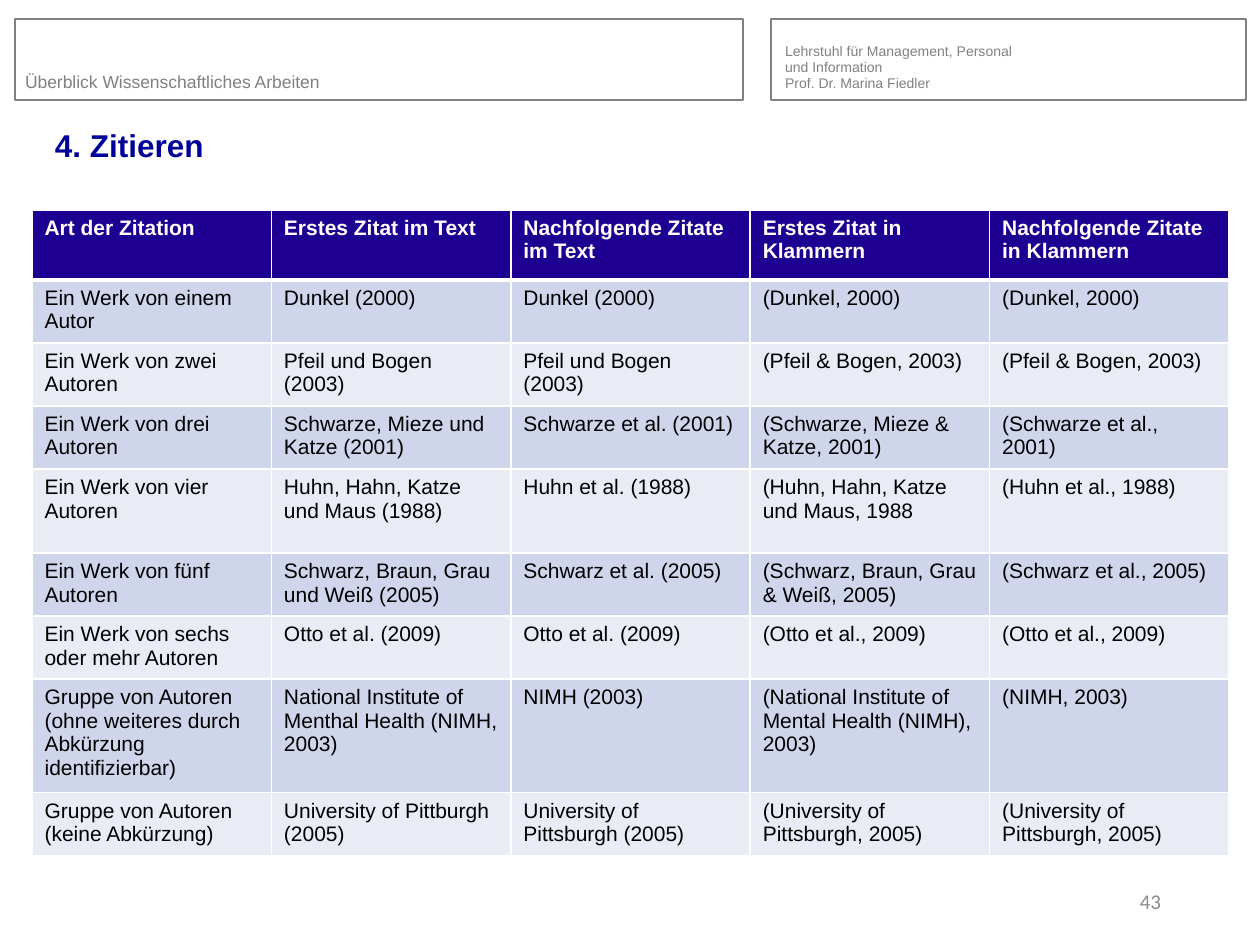
import copy

import lxml.etree
import pptx
import pptx.dml.color
import pptx.enum.shapes
import pptx.enum.text
import pptx.oxml.ns
import pptx.util

SCALE = 914400 / 126
THEME = {
    "font": "Arial", "number_font": "Calibri",
    "gray": "808080", "number_gray": "8C8C8C", "blue": "000099",
    "header": "1D0092", "bands": ("CFD5EA", "E9EBF5"),
    "white": "FFFFFF", "black": "000000",
    "title_size": 18, "table_size": 12, "course_size": 10, "chair_size": 8,
}
ANCHOR = pptx.enum.text.MSO_ANCHOR
ALIGN = pptx.enum.text.PP_ALIGN
qn = pptx.oxml.ns.qn


def px(length):
    return pptx.util.Emu(round(length * SCALE))


def write(frame, text, size, color, bold=False, font=THEME["font"], paragraph_format=None):
    frame.text = text
    for paragraph in frame.paragraphs:
        for name, value in (paragraph_format or {}).items():
            setattr(paragraph, name, value)
        for run in paragraph.runs:
            for name, value in {"size": pptx.util.Pt(size), "bold": bold, "name": font}.items():
                setattr(run.font, name, value)
            run.font.color.rgb = pptx.dml.color.RGBColor.from_string(color)
        for line_break in paragraph._p.findall(qn("a:br")):
            line_break.insert(0, copy.deepcopy(paragraph.runs[0].font._element))


deck = pptx.Presentation()
deck.slide_width, deck.slide_height = px(1260), px(945)
slide = deck.slides.add_slide(deck.slide_layouts[6])

for left, width in ((15, 728), (771, 475)):
    header_frame = slide.shapes.add_shape(
        pptx.enum.shapes.MSO_SHAPE.RECTANGLE, px(left), px(19), px(width), px(81))
    header_frame.shadow.inherit = False
    header_frame.fill.background()
    header_frame.line.color.rgb = pptx.dml.color.RGBColor.from_string(THEME["gray"])
    header_frame.line.width = pptx.util.Pt(0.75)

captions = [
    ("Überblick Wissenschaftliches Arbeiten", (25, 38, 421, 54), (0, 0), ANCHOR.BOTTOM,
     {"size": THEME["course_size"], "color": THEME["gray"]}),
    ("Lehrstuhl für Management, Personal \vund Information\nProf. Dr. Marina Fiedler",
     (785, 30, 369, 62), (0, 0), ANCHOR.BOTTOM,
     {"size": THEME["chair_size"], "color": THEME["gray"],
      "paragraph_format": {"line_spacing": 0.95}}),
    ("43", (890, 876, 284, 50), (13, 6), ANCHOR.MIDDLE,
     {"size": THEME["table_size"], "color": THEME["number_gray"],
      "font": THEME["number_font"], "paragraph_format": {"alignment": ALIGN.RIGHT}}),
    ("4. Zitieren", (42, 116, 1187, 63), (13, 6), ANCHOR.MIDDLE,
     {"size": THEME["title_size"], "color": THEME["blue"], "bold": True,
      "paragraph_format": {"line_spacing": 0.9}}),
]
for text, box, (side, edge), anchor, style in captions:
    caption = slide.shapes.add_textbox(*map(px, box)).text_frame
    layout = {"word_wrap": True, "vertical_anchor": anchor,
              "margin_left": px(side), "margin_right": px(side),
              "margin_top": px(edge), "margin_bottom": px(edge)}
    for name, value in layout.items():
        setattr(caption, name, value)
    write(caption, text, **style)

citations = [
    ("Art der Zitation", "Erstes Zitat im Text", "Nachfolgende Zitate im Text",
     "Erstes Zitat in Klammern", "Nachfolgende Zitate in Klammern"),
    ("Ein Werk von einem Autor", "Dunkel (2000)", "Dunkel (2000)",
     "(Dunkel, 2000)", "(Dunkel, 2000)"),
    ("Ein Werk von zwei Autoren", "Pfeil und Bogen (2003)", "Pfeil und Bogen (2003)",
     "(Pfeil & Bogen, 2003)", "(Pfeil & Bogen, 2003)"),
    ("Ein Werk von drei Autoren", "Schwarze, Mieze und Katze (2001)", "Schwarze et al. (2001)",
     "(Schwarze, Mieze & Katze, 2001)", "(Schwarze et al., 2001)"),
    ("Ein Werk von vier Autoren", "Huhn, Hahn, Katze und Maus (1988)", "Huhn et al. (1988)",
     "(Huhn, Hahn, Katze und Maus, 1988", "(Huhn et al., 1988)"),
    ("Ein Werk von fünf Autoren", "Schwarz, Braun, Grau und Weiß (2005)",
     "Schwarz et al. (2005)", "(Schwarz, Braun, Grau & Weiß, 2005)", "(Schwarz et al., 2005)"),
    ("Ein Werk von sechs oder mehr Autoren", "Otto et al. (2009)", "Otto et al. (2009)",
     "(Otto et al., 2009)", "(Otto et al., 2009)"),
    ("Gruppe von Autoren (ohne weiteres durch Abkürzung identifizierbar)",
     "National Institute of Menthal Health (NIMH, 2003)", "NIMH (2003)",
     "(National Institute of Mental Health (NIMH), 2003)", "(NIMH, 2003)"),
    ("Gruppe von Autoren (keine Abkürzung)", "University of Pittburgh (2005)",
     "University of Pittsburgh (2005)", "(University of Pittsburgh, 2005)",
     "(University of Pittsburgh, 2005)"),
]
row_heights = [70, 59, 59, 59, 84, 59, 59, 107, 59]
table_width = px(1197)
citation_table = slide.shapes.add_table(
    len(citations), len(citations[0]), px(32), px(210), table_width, px(sum(row_heights))).table
for column in citation_table.columns:
    column.width = pptx.util.Emu(table_width // len(citations[0]))

for row, (entries, height) in enumerate(zip(citations, row_heights)):
    citation_table.rows[row].height = px(height)
    is_header = row == 0
    fill = THEME["header"] if is_header else THEME["bands"][(row - 1) % 2]
    color = THEME["white"] if is_header else THEME["black"]
    border_widths = {"L": 1, "R": 1, "T": 3 if row == 1 else 1, "B": 3 if is_header else 1}
    for column, entry in enumerate(entries):
        cell = citation_table.cell(row, column)
        write(cell.text_frame, entry, THEME["table_size"], color, bold=is_header)
        cell_properties = cell._tc.get_or_add_tcPr()
        for side, width in border_widths.items():
            border = lxml.etree.SubElement(
                cell_properties, qn(f"a:ln{side}"), w=str(pptx.util.Pt(width)))
            border_fill = lxml.etree.SubElement(border, qn("a:solidFill"))
            lxml.etree.SubElement(border_fill, qn("a:srgbClr"), val=THEME["white"])
        cell.fill.solid()
        cell.fill.fore_color.rgb = pptx.dml.color.RGBColor.from_string(fill)

deck.save("out.pptx")
